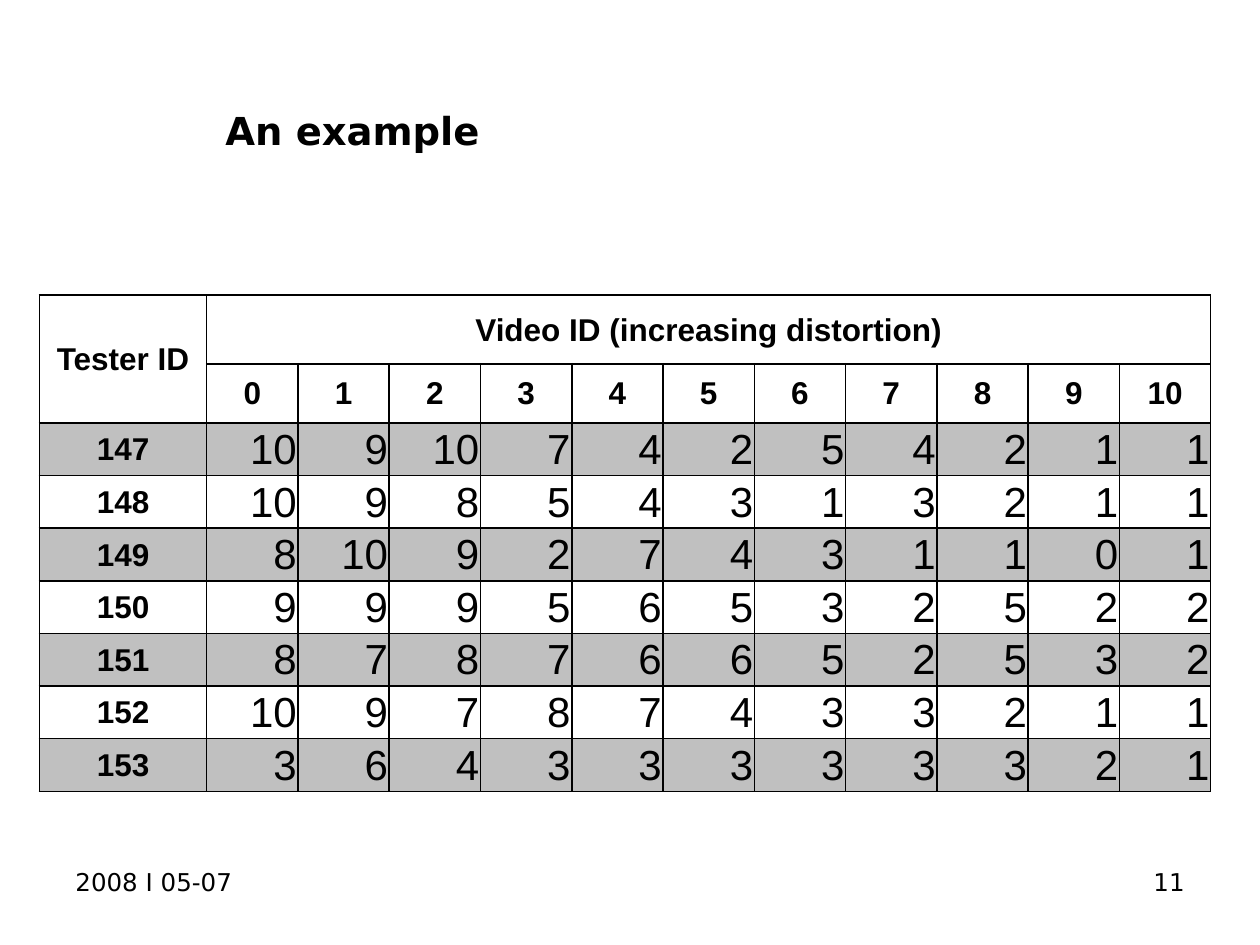
from dataclasses import dataclass

from lxml.etree import SubElement
from pptx import Presentation
from pptx.dml.color import RGBColor
from pptx.enum.text import MSO_ANCHOR, PP_ALIGN
from pptx.oxml.ns import qn
from pptx.util import Pt


@dataclass(frozen=True)
class Theme:
    """Hold the colours, fonts and type sizes."""
    ink: str = "000000"
    band: str = "C0C0C0"
    sans: str = "DejaVu Sans"
    grid: str = "Arial"
    title: int = 22
    foot: int = 14
    head: int = 18
    score: int = 24
    thin: float = 1
    thick: float = 1.5


THEME = Theme()
SCORES = {
    147: (10, 9, 10, 7, 4, 2, 5, 4, 2, 1, 1),
    148: (10, 9, 8, 5, 4, 3, 1, 3, 2, 1, 1),
    149: (8, 10, 9, 2, 7, 4, 3, 1, 1, 0, 1),
    150: (9, 9, 9, 5, 6, 5, 3, 2, 5, 2, 2),
    151: (8, 7, 8, 7, 6, 6, 5, 2, 5, 3, 2),
    152: (10, 9, 7, 8, 7, 4, 3, 3, 2, 1, 1),
    153: (3, 6, 4, 3, 3, 3, 3, 3, 3, 2, 1),
}
WIDTHS = [95.6] + [52.18] * 11
HEIGHTS = [39.4, 33.7] + [30.09] * len(SCORES)


def add_run(frame, text, font, size, bold=False, align=PP_ALIGN.LEFT):
    """Write one styled run into the first paragraph."""
    para = frame.paragraphs[0]
    para.alignment = align
    run = para.add_run()
    run.text = text
    run.font.name = font
    run.font.size = Pt(size)
    run.font.bold = bold
    run.font.color.rgb = RGBColor.from_string(THEME.ink)


def add_label(slide, box, text, size, anchor=MSO_ANCHOR.TOP, **style):
    """Add a wrapped text box."""
    frame = slide.shapes.add_textbox(*map(Pt, box)).text_frame
    frame.word_wrap = True
    frame.vertical_anchor = anchor
    add_run(frame, text, THEME.sans, size, **style)


def add_edge(cell, side, width):
    """Draw one border of a cell."""
    line = SubElement(cell._tc.get_or_add_tcPr(), qn(f"a:ln{side}"), w=str(Pt(width)))
    fill = SubElement(line, qn("a:solidFill"))
    SubElement(fill, qn("a:srgbClr"), val=THEME.ink)


def style_cell(cell, row):
    """Set the insets, borders and fill of a cell."""
    cell.vertical_anchor = MSO_ANCHOR.MIDDLE
    cell.margin_left = cell.margin_right = cell.margin_top = Pt(0.72)
    cell.margin_bottom = Pt(0)
    add_edge(cell, "L", THEME.thin)
    add_edge(cell, "R", THEME.thin)
    add_edge(cell, "T", THEME.thick if row in (1, 2) else THEME.thin)
    add_edge(cell, "B", THEME.thick if row < 2 else THEME.thin)
    if row >= 2 and row % 2 == 0:
        cell.fill.solid()
        cell.fill.fore_color.rgb = RGBColor.from_string(THEME.band)
    else:
        cell.fill.background()


def add_head(cell, text):
    """Write a bold centred heading into a cell."""
    add_run(cell.text_frame, text, THEME.grid, THEME.head, True, PP_ALIGN.CENTER)


def add_grid(slide):
    """Add the table of scores."""
    size = sum(WIDTHS), sum(HEIGHTS)
    table = slide.shapes.add_table(
        len(HEIGHTS), len(WIDTHS), Pt(22.5), Pt(168.6), *map(Pt, size)).table
    table.first_row = table.horz_banding = False
    for col, width in zip(table.columns, WIDTHS):
        col.width = Pt(width)
    for row, height in enumerate(HEIGHTS):
        table.rows[row].height = Pt(height)
        for cell in table.rows[row].cells:
            style_cell(cell, row)
    table.cell(0, 0).merge(table.cell(1, 0))
    table.cell(0, 1).merge(table.cell(0, len(WIDTHS) - 1))
    add_head(table.cell(0, 0), "Tester ID")
    add_head(table.cell(0, 1), "Video ID (increasing distortion)")
    for video in range(len(WIDTHS) - 1):
        add_head(table.cell(1, video + 1), str(video))
    for row, (tester, scores) in enumerate(SCORES.items(), 2):
        add_head(table.cell(row, 0), str(tester))
        for col, score in enumerate(scores, 1):
            add_run(table.cell(row, col).text_frame, str(score),
                    THEME.grid, THEME.score, align=PP_ALIGN.RIGHT)


def main():
    """Build and save the slide."""
    deck = Presentation()
    deck.slide_width, deck.slide_height = Pt(720), Pt(540)
    slide = deck.slides.add_slide(deck.slide_layouts[6])
    add_label(slide, (121.7, 37.5, 562.3, 74), "An example", THEME.title,
              MSO_ANCHOR.MIDDLE, bold=True)
    add_label(slide, (36, 492, 168, 37.5), "2008 I 05-07", THEME.foot)
    add_label(slide, (516, 492, 168, 37.5), "11", THEME.foot, align=PP_ALIGN.RIGHT)
    add_grid(slide)
    deck.save("out.pptx")


if __name__ == "__main__":
    main()
